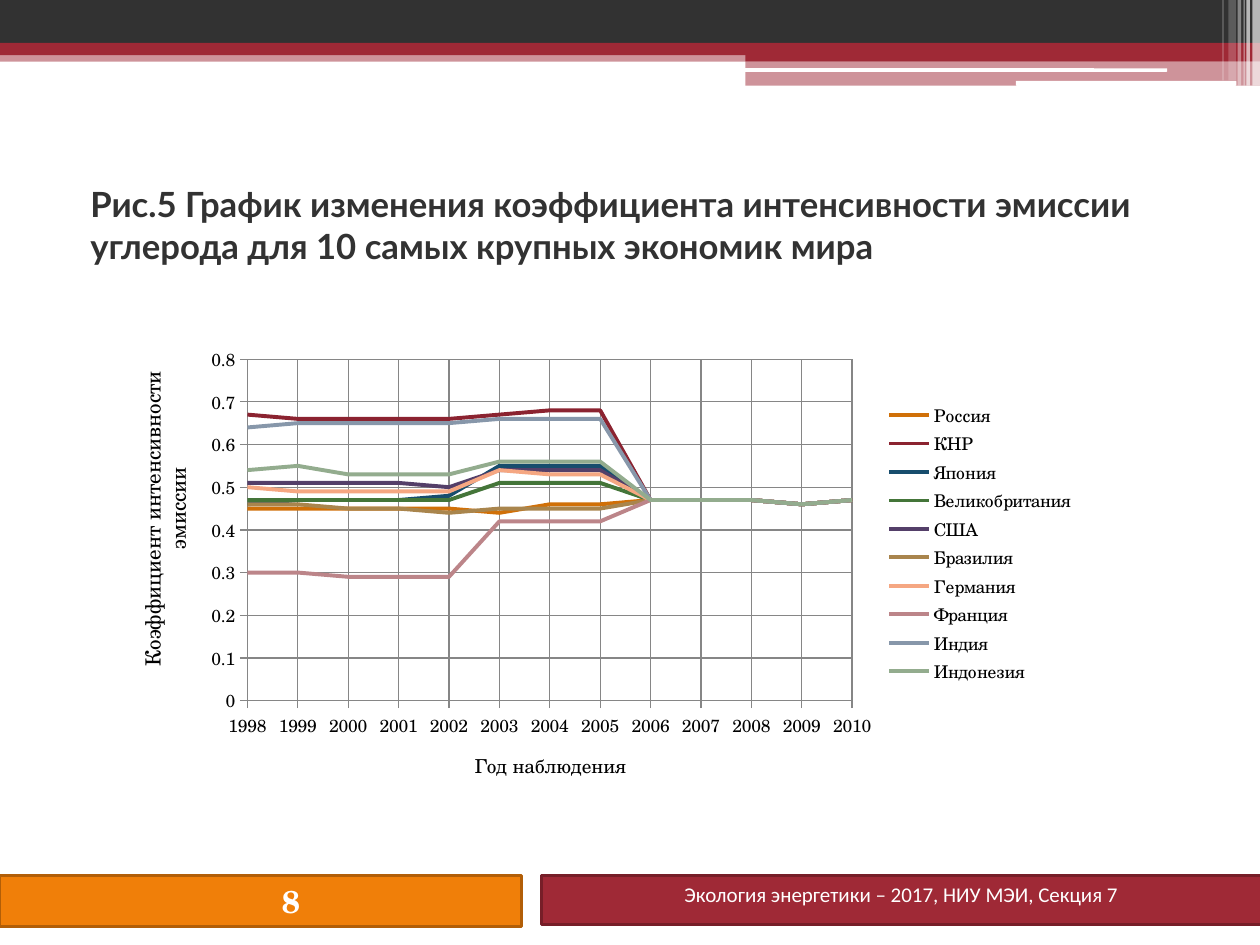
from typing import NamedTuple

from lxml.etree import SubElement
from pptx import Presentation
from pptx.chart.data import CategoryChartData
from pptx.dml.color import RGBColor
from pptx.enum.chart import XL_CHART_TYPE, XL_LEGEND_POSITION, XL_TICK_MARK
from pptx.enum.shapes import MSO_SHAPE
from pptx.enum.text import MSO_ANCHOR, PP_ALIGN
from pptx.oxml import parse_xml
from pptx.oxml.ns import nsdecls, qn
from pptx.util import Pt

SERIF = "TeX Gyre Schola"
DARK, RED, ORANGE, WHITE, BLACK, GRID = "323232", "9F2936", "F07F09", "FFFFFF", "000000", "868686"


class Box(NamedTuple):
    left: float
    top: float
    width: float
    height: float


class Band(NamedTuple):
    box: Box
    fill: str
    alpha: int = 100
    outline: str = ""
    preset: MSO_SHAPE = MSO_SHAPE.RECTANGLE


class Label(NamedTuple):
    text: str
    size: float
    font: str = SERIF
    color: str = BLACK
    bold: bool = False
    align: PP_ALIGN = PP_ALIGN.LEFT


class Country(NamedTuple):
    name: str
    color: str
    intensity: tuple[float, ...]


ROUND = MSO_SHAPE.ROUNDED_RECTANGLE
BANNER = [
    Band(Box(0, 28.8, 720, 6.5), RED, 50),
    Band(Box(0, 0, 720, 24.5), DARK),
    Band(Box(0, 24.5, 720, 7), RED),
    Band(Box(426, 28, 294, 7), RED),
    Band(Box(426, 35, 294, 14), RED, 50),
    Band(Box(425.5, 39, 241.5, 2), WHITE, preset=ROUND),
    Band(Box(580.5, 46.2, 126, 2.8), WHITE, preset=ROUND),
    Band(Box(715.7, 0, 4.3, 49), WHITE, 65),
    Band(Box(712.2, 0, 2, 49), WHITE, 65),
    Band(Box(710.6, 0, 0.7, 49), WHITE, 60),
    Band(Box(707.2, 0, 2, 49), WHITE, 40),
    Band(Box(702, 0, 4.3, 46), WHITE, 20),
    Band(Box(698.5, 0, 0.7, 46), WHITE, 30),
]

YEARS = [str(year) for year in range(1998, 2011)]
COMMON_TAIL = (0.47, 0.47, 0.47, 0.46, 0.47)
COUNTRIES = [
    Country("Россия", "D07008", (0.45, 0.45, 0.45, 0.45, 0.45, 0.44, 0.46, 0.46)),
    Country("КНР", "8B2330", (0.67, 0.66, 0.66, 0.66, 0.66, 0.67, 0.68, 0.68)),
    Country("Япония", "174D6D", (0.46, 0.47, 0.47, 0.47, 0.48, 0.55, 0.55, 0.55)),
    Country("Великобритания", "447539", (0.47, 0.47, 0.47, 0.47, 0.47, 0.51, 0.51, 0.51)),
    Country("США", "543F69", (0.51, 0.51, 0.51, 0.51, 0.5, 0.54, 0.54, 0.54)),
    Country("Бразилия", "A9854D", (0.46, 0.46, 0.45, 0.45, 0.44, 0.45, 0.45, 0.45)),
    Country("Германия", "F5A782", (0.5, 0.49, 0.49, 0.49, 0.49, 0.54, 0.53, 0.53)),
    Country("Франция", "BC8589", (0.3, 0.3, 0.29, 0.29, 0.29, 0.42, 0.42, 0.42)),
    Country("Индия", "8797AA", (0.64, 0.65, 0.65, 0.65, 0.65, 0.66, 0.66, 0.66)),
    Country("Индонезия", "93AC8E", (0.54, 0.55, 0.53, 0.53, 0.53, 0.56, 0.56, 0.56)),
]


def rgb(color: str) -> RGBColor:
    """Turn a hex string into a colour."""
    return RGBColor.from_string(color)


def points(box: Box) -> list[Pt]:
    """Convert a box to lengths."""
    return [Pt(length) for length in box]


def draw_band(slide, band: Band):
    """Draw a filled bar, translucent or outlined as described."""
    bar = slide.shapes.add_shape(band.preset, *points(band.box))
    bar.shadow.inherit = False
    bar.fill.solid()
    bar.fill.fore_color.rgb = rgb(band.fill)
    if band.alpha < 100:
        fill_color = bar.fill._xPr.find(qn("a:solidFill"))[0]
        SubElement(fill_color, qn("a:alpha"), val=str(band.alpha * 1000))
    if band.outline:
        bar.line.color.rgb = rgb(band.outline)
        bar.line.width = Pt(1.5)
    else:
        bar.line.fill.background()
    return bar


def write(shape, label: Label, first_indent: float = 0, last_indent: float = 0) -> None:
    """Write a label, with optional left indents on its first and last lines."""
    frame = shape.text_frame
    frame.word_wrap = True
    frame.vertical_anchor = MSO_ANCHOR.TOP
    frame.text = label.text
    for paragraph in frame.paragraphs:
        paragraph.alignment = label.align
        font = paragraph.runs[0].font
        font.name, font.size, font.bold = label.font, Pt(label.size), label.bold
        font.color.rgb = rgb(label.color)
    for paragraph, indent in ((frame.paragraphs[0], first_indent), (frame.paragraphs[-1], last_indent)):
        if indent:
            paragraph._p.get_or_add_pPr().set("marL", str(Pt(indent)))


def add_text(slide, box: Box, label: Label, last_indent: float = 0):
    """Place a label in a text box."""
    holder = slide.shapes.add_textbox(*points(box))
    write(holder, label, last_indent=last_indent)
    return holder


def set_layout(element, box: Box, target: str = "") -> None:
    """Give a chart part a manual layout in fractions of the chart."""
    for old in element.findall(qn("c:layout")):
        element.remove(old)
    inner = f'<c:layoutTarget val="{target}"/>' if target else ""
    modes = '<c:xMode val="edge"/><c:yMode val="edge"/>'
    sizes = "".join(f'<c:{key} val="{value}"/>' for key, value in zip("xywh", box))
    layout = parse_xml(
        f'<c:layout {nsdecls("c")}><c:manualLayout>{inner}{modes}{sizes}</c:manualLayout></c:layout>'
    )
    position = element.find(qn("c:legendPos"))
    element.insert(0 if position is None else element.index(position) + 1, layout)


def add_intensity_chart(slide, box: Box) -> None:
    """Draw the carbon intensity lines by country."""
    table = CategoryChartData(number_format="General")
    table.categories = YEARS
    for country in COUNTRIES:
        table.add_series(country.name, country.intensity + COMMON_TAIL)
    chart = slide.shapes.add_chart(XL_CHART_TYPE.LINE, *points(box), table).chart
    chart.has_title = False
    chart.font.name, chart.font.size = SERIF, Pt(10)
    chart.font.color.rgb = rgb(BLACK)
    chart.has_legend = True
    chart.legend.position = XL_LEGEND_POSITION.RIGHT
    chart.legend.include_in_layout = False
    chart.plots[0].vary_by_categories = False
    for line, country in zip(chart.plots[0].series, COUNTRIES):
        line.smooth = False
        line.format.line.color.rgb = rgb(country.color)
        line.format.line.width = Pt(2.25)
    for axis in (chart.category_axis, chart.value_axis):
        axis.has_major_gridlines = True
        axis.major_tick_mark = XL_TICK_MARK.CROSS
        for stroke in (axis.format.line, axis.major_gridlines.format.line):
            stroke.color.rgb = rgb(GRID)
            stroke.width = Pt(0.75)
    scale = chart.value_axis
    scale.minimum_scale, scale.maximum_scale, scale.major_unit = 0, 0.8, 0.1
    on_ticks = parse_xml(f'<c:crossBetween {nsdecls("c")} val="midCat"/>')
    scale._element.find(qn("c:crosses")).addnext(on_ticks)
    set_layout(chart._chartSpace.chart.plotArea, Box(0.11, 0.08, 0.64, 0.77), "inner")
    set_layout(chart.legend._element, Box(0.78, 0.17, 0.21, 0.65))


def main() -> None:
    """Build and save the slide."""
    deck = Presentation()
    deck.slide_width, deck.slide_height = Pt(720), Pt(540)
    slide = deck.slides.add_slide(deck.slide_layouts[6])
    for band in BANNER:
        draw_band(slide, band)
    title = "Рис.5 График изменения коэффициента интенсивности эмиссии углерода для 10 самых крупных экономик мира"
    add_text(slide, Box(44.6, 101, 648, 84), Label(title, 19.8, "Lato", DARK, True))
    add_intensity_chart(slide, Box(82, 185, 540, 253.5))
    page = draw_band(slide, Band(Box(0, 500.4, 298, 29), ORANGE, outline="B25E07"))
    write(page, Label("8", 18, color=WHITE, bold=True), first_indent=154)
    add_text(slide, Box(264.2, 427.7, 124, 25), Label("Год наблюдения", 11))
    intensity = add_text(
        slide, Box(-1.4, 274.3, 191.5, 36), Label("Коэффициент интенсивности\nэмиссии", 12), last_indent=67
    )
    intensity.rotation = 270
    footer = draw_band(slide, Band(Box(309.6, 500.4, 411, 28), RED, outline="761E28"))
    conference = "Экология энергетики – 2017, НИУ МЭИ, Секция 7"
    write(footer, Label(conference, 12, "Calibri", WHITE, align=PP_ALIGN.CENTER))
    deck.save("out.pptx")


if __name__ == "__main__":
    main()
